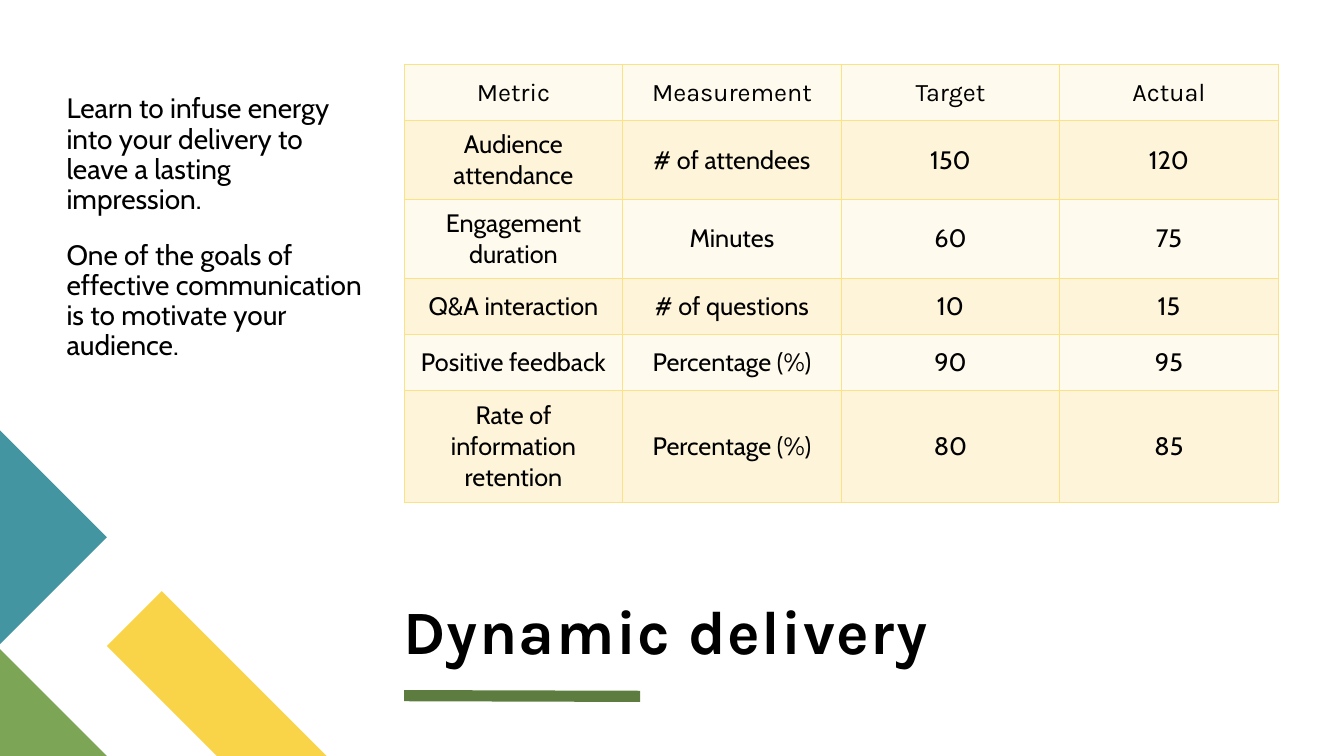
from lxml.etree import SubElement
from pptx import Presentation
from pptx.dml.color import RGBColor
from pptx.enum.shapes import MSO_CONNECTOR
from pptx.enum.text import MSO_ANCHOR as Anchor, PP_ALIGN as Align
from pptx.oxml.ns import qn
from pptx.util import Pt

COLORS = {
    "text": "000000",
    "teal": "4495A2",
    "green": "7CA655",
    "yellow": "F9D448",
    "rule": "5D7D40",
    "border": "FBE284",
    "light_row": "FEFAED",
    "dark_row": "FDF4D9",
}
HEADING_FONT = "Karla"
BODY_FONT = "Cabin"

TITLE = "Dynamic delivery"
BODY = [
    "Learn to infuse energy into your delivery to leave a lasting impression.",
    "One of the goals of effective communication is to motivate your audience.",
]
METRICS = [
    ("Metric", "Measurement", "Target", "Actual"),
    ("Audience attendance", "# of attendees", "150", "120"),
    ("Engagement duration", "Minutes", "60", "75"),
    ("Q&A interaction", "# of questions", "10", "15"),
    ("Positive feedback", "Percentage (%)", "90", "95"),
    ("Rate of information retention", "Percentage (%)", "80", "85"),
]
ROW_HEIGHTS = [40.2, 56.2, 56.2, 40.2, 40.2, 79.8]


def color(name):
    return RGBColor.from_string(COLORS[name])


def write(frame, paragraphs, font=BODY_FONT, size=18, bold=False, align=Align.LEFT,
          line_spacing=1.0, space_before=0, tracking=0):
    for index, text in enumerate(paragraphs):
        paragraph = frame.paragraphs[0] if index == 0 else frame.add_paragraph()
        paragraph.alignment = align
        paragraph.line_spacing = line_spacing
        paragraph.space_before = Pt(space_before)
        run = paragraph.add_run()
        run.text = text
        run.font.name = font
        run.font.size = Pt(size)
        run.font.bold = bold
        run.font.color.rgb = color("text")
        if tracking:
            run.font._element.set("spc", str(tracking * 100))


def add_text_box(slide, box, insets, anchor, paragraphs, **text_format):
    frame = slide.shapes.add_textbox(*map(Pt, box)).text_frame
    frame.word_wrap = True
    frame.vertical_anchor = anchor
    (frame.margin_left, frame.margin_top,
     frame.margin_right, frame.margin_bottom) = map(Pt, insets)
    write(frame, paragraphs, **text_format)


def add_polygon(slide, points, fill):
    start, *others = [(Pt(x), Pt(y)) for x, y in points]
    builder = slide.shapes.build_freeform(*start)
    builder.add_line_segments(others, close=True)
    shape = builder.convert_to_shape()
    shape.shadow.inherit = False
    shape.fill.solid()
    shape.fill.fore_color.rgb = color(fill)
    shape.line.fill.background()


def add_corner_decoration(slide, left, top, width, height):
    right, bottom = left + width, top + height
    side = 76.4
    band = 78.5
    add_polygon(slide, [(right, bottom), (right - band, bottom),
                        (right - 2 * band, bottom - band),
                        (right - 1.5 * band, bottom - 1.5 * band)], "yellow")
    add_polygon(slide, [(left, bottom - side), (left + side, bottom), (left, bottom)], "green")
    add_polygon(slide, [(left, top), (left + side, top + side), (left, top + 2 * side)], "teal")


def add_title(slide, left, top, width, height):
    add_text_box(slide, (left, top, width, height), (0, 0, 0, 0), Anchor.BOTTOM, [TITLE],
                 font=HEADING_FONT, size=44, bold=True, line_spacing=0.8, tracking=1)
    rule_top = top + height + 21
    rule = slide.shapes.add_connector(MSO_CONNECTOR.STRAIGHT, Pt(left + 0.7), Pt(rule_top),
                                      Pt(left + 169.2), Pt(rule_top + 0.5))
    rule.line.color.rgb = color("rule")
    rule.line.width = Pt(8)
    SubElement(rule._element.spPr, qn("a:effectLst"))


def add_body(slide, left, top, width, height):
    add_text_box(slide, (left, top, width, height), (0, 21.6, 7.2, 3.6), Anchor.TOP, BODY,
                 size=20, line_spacing=0.9, space_before=18)


def add_borders(cell):
    properties = cell._tc.get_or_add_tcPr()
    for side in ("lnL", "lnR", "lnT", "lnB"):
        line = SubElement(properties, qn(f"a:{side}"), w=str(Pt(1)))
        fill = SubElement(line, qn("a:solidFill"))
        SubElement(fill, qn("a:srgbClr"), val=COLORS["border"])


def add_metrics_table(slide, left, top, width, height):
    table = slide.shapes.add_table(len(METRICS), len(METRICS[0]), Pt(left), Pt(top),
                                   Pt(width), Pt(height)).table
    for row, row_height in zip(table.rows, ROW_HEIGHTS):
        row.height = Pt(row_height)
    for row_index, values in enumerate(METRICS):
        for column_index, value in enumerate(values):
            cell = table.cell(row_index, column_index)
            cell.vertical_anchor = Anchor.MIDDLE
            add_borders(cell)
            cell.fill.solid()
            cell.fill.fore_color.rgb = color("dark_row" if row_index % 2 else "light_row")
            write(cell.text_frame, [value], align=Align.CENTER,
                  font=BODY_FONT if row_index else HEADING_FONT)


def main():
    presentation = Presentation()
    presentation.slide_width, presentation.slide_height = Pt(960), Pt(540)
    slide = presentation.slides.add_slide(presentation.slide_layouts[6])
    add_corner_decoration(slide, 0, 307.4, 233.3, 232.6)
    add_title(slide, 288, 367.2, 625, 108.7)
    add_body(slide, 47.5, 46.1, 222.5, 314.6)
    add_metrics_table(slide, 288.7, 46.1, 624.4, sum(ROW_HEIGHTS))
    presentation.save("out.pptx")


if __name__ == "__main__":
    main()
